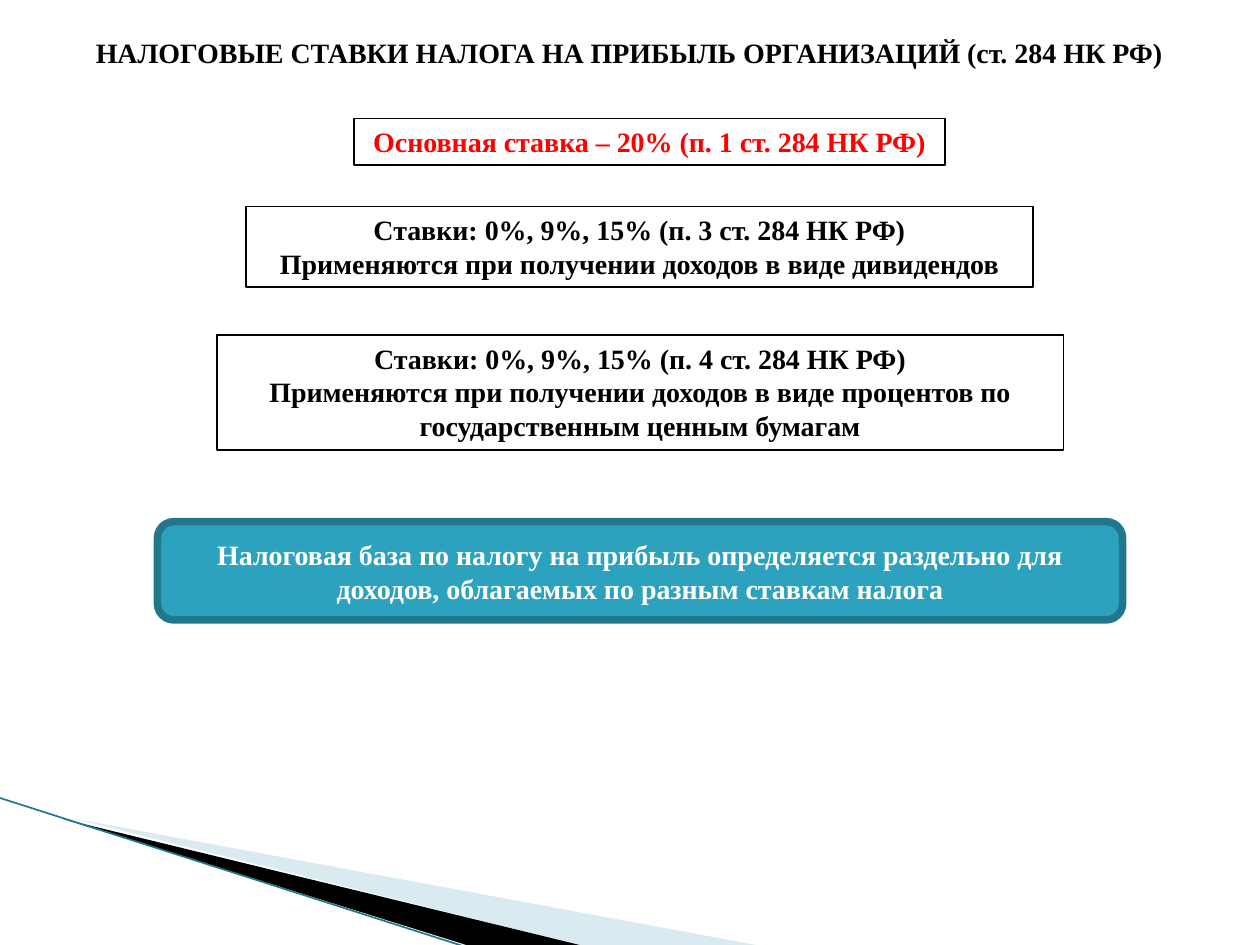
import pptx
import pptx.dml.color
import pptx.enum.shapes
import pptx.enum.text
import pptx.oxml.ns
import pptx.util
from lxml import etree

# Grid of square cells, 0.1 inch each
COLUMNS, ROWS = 100, 75
CELL = pptx.util.Inches(0.1)

BLACK, RED, WHITE = "000000", "FF0000", "FFFFFF"
TEAL, DARK_TEAL, PALE_BLUE = "2DA2BF", "21788D", "A0CBDC"
TEXT_FORMAT = {"name": "Times New Roman", "size": pptx.util.Pt(16), "bold": True}

TITLE = "НАЛОГОВЫЕ СТАВКИ НАЛОГА НА ПРИБЫЛЬ ОРГАНИЗАЦИЙ (ст. 284 НК РФ)"
CONCLUSION = ("Налоговая база по налогу на прибыль определяется раздельно для "
              "доходов, облагаемых по разным ставкам налога")
RATE_BOXES = [
    ((28.1, 9.4, 46.9, 3.7), RED, ["Основная ставка – 20% (п. 1 ст. 284 НК РФ)"]),
    ((19.5, 16.4, 62.5, 6.4), BLACK, [
        "Ставки: 0%, 9%, 15% (п. 3 ст. 284 НК РФ)",
        "Применяются при получении доходов в виде дивидендов"]),
    ((17.2, 26.6, 67.2, 9.1), BLACK, [
        "Ставки: 0%, 9%, 15% (п. 4 ст. 284 НК РФ)",
        "Применяются при получении доходов в виде процентов по "
        "государственным ценным бумагам"]),
]


def cells(*counts):
    return [round(count * CELL) for count in counts]


def color(hex_value):
    return pptx.dml.color.RGBColor.from_string(hex_value)


def paint(shape, fill=None, line=None, width=1):
    shape.shadow.inherit = False
    if fill:
        shape.fill.solid()
        shape.fill.fore_color.rgb = color(fill)
    else:
        shape.fill.background()
    if line:
        shape.line.color.rgb = color(line)
        shape.line.width = pptx.util.Pt(width)
    else:
        shape.line.fill.background()


def write(shape, lines, text_color):
    frame = shape.text_frame
    frame.word_wrap = True
    frame.vertical_anchor = pptx.enum.text.MSO_ANCHOR.TOP
    frame.text = "\n".join(lines)
    for paragraph in frame.paragraphs:
        paragraph.alignment = pptx.enum.text.PP_ALIGN.CENTER
        for run in paragraph.runs:
            for attribute, value in TEXT_FORMAT.items():
                setattr(run.font, attribute, value)
            run.font.color.rgb = color(text_color)


def add_text(slide, place, lines, text_color):
    write(slide.shapes.add_textbox(*cells(*place)), lines, text_color)


def add_box(slide, kind, place, **look):
    shape = slide.shapes.add_shape(kind, *cells(*place))
    paint(shape, **look)
    return shape


def add_wedge(slide, points, fill, opacity=100):
    start, *rest = points
    builder = slide.shapes.build_freeform(*start, scale=CELL)
    builder.add_line_segments(rest, close=True)
    wedge = builder.convert_to_shape()
    paint(wedge, fill=fill)
    if opacity < 100:
        tone = wedge.fill._xPr.find(".//" + pptx.oxml.ns.qn("a:srgbClr"))
        etree.SubElement(tone, pptx.oxml.ns.qn("a:alpha"), val=str(opacity * 1000))


def add_line(slide, start, end, line_color, width):
    line = slide.shapes.add_connector(
        pptx.enum.shapes.MSO_CONNECTOR.STRAIGHT, *cells(*start, *end))
    line.line.color.rgb = color(line_color)
    line.line.width = pptx.util.Pt(width)
    etree.SubElement(line._element.spPr, pptx.oxml.ns.qn("a:effectLst"))


def main():
    presentation = pptx.Presentation()
    presentation.slide_width, presentation.slide_height = cells(COLUMNS, ROWS)
    slide = presentation.slides.add_slide(presentation.slide_layouts[6])
    shape_kind = pptx.enum.shapes.MSO_SHAPE

    # Corner decoration
    add_wedge(slide, [(5.5, 65.1), (59.5, 75.1), (45.6, 75.1), (5.5, 65)],
              PALE_BLUE, opacity=40)
    add_wedge(slide, [(5.3, 64.9), (45.7, 75.1), (37.2, 75.2), (5.4, 65)], BLACK)
    add_line(slide, (-0.1, 63.3), (37.1, 75.2), DARK_TEAL, 0.95)

    # Title
    add_text(slide, (6.2, 2.3, 87.5, 3.7), [TITLE], BLACK)

    # Tax rates
    for place, text_color, lines in RATE_BOXES:
        box = add_box(slide, shape_kind.RECTANGLE, place, line=BLACK)
        write(box, lines, text_color)

    # Conclusion
    add_box(slide, shape_kind.ROUNDED_RECTANGLE, (12.5, 41.4, 76.6, 7.8),
            fill=TEAL, line=DARK_TEAL, width=4.33)
    add_text(slide, (14.1, 42.2, 73.4, 6.4), [CONCLUSION], WHITE)

    presentation.save("out.pptx")


if __name__ == "__main__":
    main()
